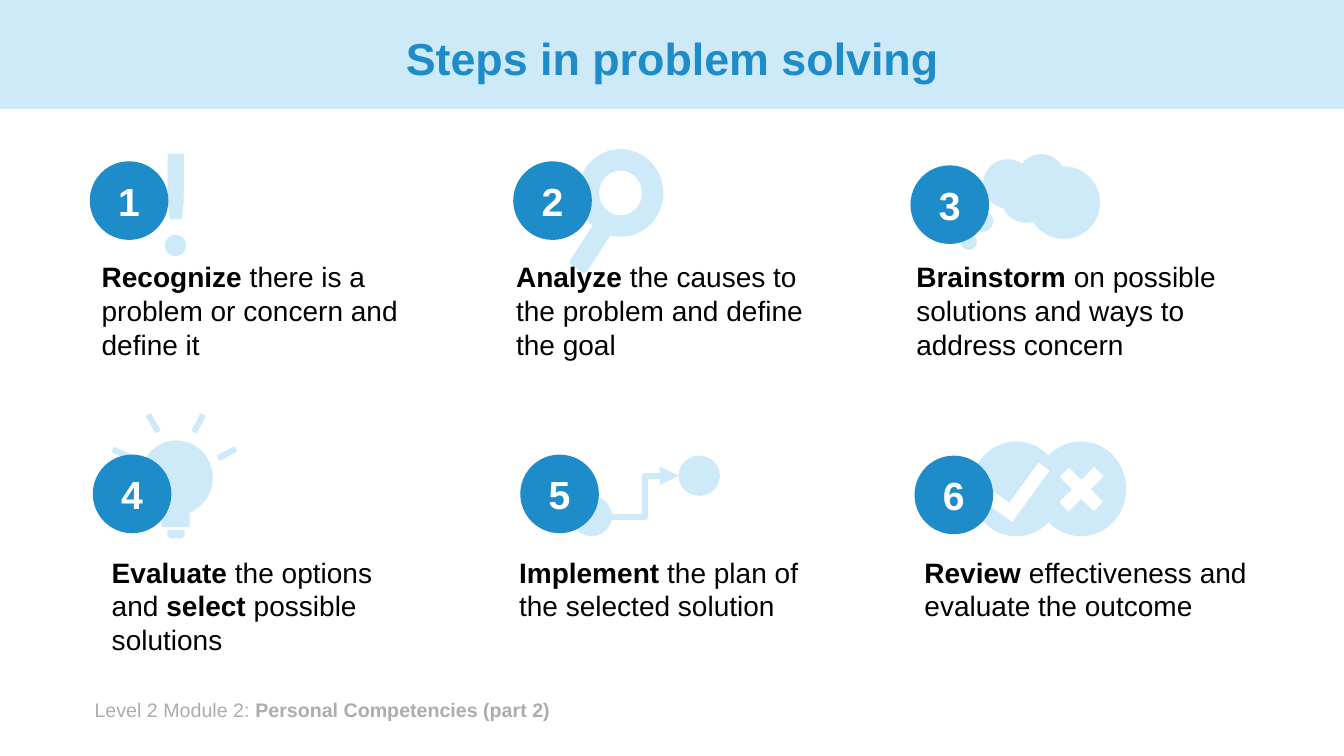
from dataclasses import dataclass

from lxml.etree import SubElement
from pptx import Presentation
from pptx.dml.color import RGBColor
from pptx.enum.shapes import MSO_CONNECTOR, MSO_SHAPE
from pptx.enum.text import MSO_ANCHOR, MSO_AUTO_SIZE, PP_ALIGN
from pptx.oxml.ns import qn
from pptx.util import Inches, Pt


@dataclass(frozen=True)
class Theme:
    font: str = "Arial"
    icon_font: str = "Lato"
    accent: str = "1D8CC8"
    pale: str = "CEE9F8"
    ink: str = "000000"
    white: str = "FFFFFF"
    muted: str = "AFABAB"
    title_size: int = 32
    badge_size: int = 28
    body_size: int = 20
    footer_size: int = 14
    mark_size: int = 100


THEME = Theme()
WIDTH, HEIGHT = 13.33, 7.5

# Grid: each step is placed from the origin of its cell
COLUMNS = (0.9, 5.0, 9.0)
ROWS = (1.5, 4.5)
TEXT_DROP = (1.03, 0.96)
TEXT_HEIGHT = (1.11, 0.77)
BADGE = 0.78


def write(shape, runs, size=THEME.body_size, color=THEME.ink, font=THEME.font,
          align=PP_ALIGN.LEFT, anchor=MSO_ANCHOR.TOP, spacing=None,
          fit=MSO_AUTO_SIZE.NONE):
    """Fill a shape with one paragraph of (text, bold) runs."""
    frame = shape.text_frame
    frame.word_wrap = True
    frame.auto_size = fit
    frame.vertical_anchor = anchor
    paragraph = frame.paragraphs[0]
    paragraph.alignment = align
    if spacing:
        paragraph.line_spacing = spacing
    for text, bold in runs:
        run = paragraph.add_run()
        run.text = text
        run.font.name = font
        run.font.size = Pt(size)
        run.font.bold = bold
        run.font.color.rgb = RGBColor.from_string(color)


def add_text(shapes, box, runs, **text_format):
    shape = shapes.add_textbox(*map(Inches, box))
    write(shape, runs, fit=MSO_AUTO_SIZE.SHAPE_TO_FIT_TEXT, **text_format)


def add_solid(shapes, kind, box, fill=THEME.pale, rotation=0, adjustments=()):
    shape = shapes.add_shape(kind, *map(Inches, box))
    shape.shadow.inherit = False
    shape.fill.solid()
    shape.fill.fore_color.rgb = RGBColor.from_string(fill)
    shape.line.fill.background()
    shape.rotation = rotation
    for index, value in enumerate(adjustments):
        shape.adjustments[index] = value
    return shape


def add_elbow_arrow(shapes, start, end):
    arrow = shapes.add_connector(MSO_CONNECTOR.ELBOW, *map(Inches, start + end))
    arrow.line.color.rgb = RGBColor.from_string(THEME.pale)
    arrow.line.width = Pt(4.5)
    properties = arrow.element.spPr
    SubElement(properties.find(qn("a:ln")), qn("a:tailEnd"), type="triangle")
    SubElement(properties, qn("a:effectLst"))


# Icons, drawn from a cell origin (x, y)
def draw_exclamation(shapes, x, y):
    add_text(shapes, (x + 0.08, y - 0.4, 1.54, 1.78), [("!", True)],
             size=THEME.mark_size, color=THEME.pale, font=THEME.icon_font,
             align=PP_ALIGN.CENTER)


def draw_magnifier(shapes, x, y):
    group = shapes.add_group_shape().shapes
    add_solid(group, MSO_SHAPE.DONUT, (x + 0.73, y - 0.02, 0.85, 0.87))
    add_solid(group, MSO_SHAPE.ROUNDED_RECTANGLE,
              (x + 0.77, y + 0.66, 0.2, 0.55), rotation=33)


def draw_cloud(shapes, x, y):
    group = shapes.add_group_shape().shapes
    for left, top, size in ((0.75, 0.08, 0.49), (0.93, 0.22, 0.49),
                            (1.08, 0.03, 0.49), (1.19, 0.15, 0.72),
                            (0.64, 0.59, 0.21), (0.53, 0.82, 0.16)):
        add_solid(group, MSO_SHAPE.OVAL, (x + left, y + top, size, size))


def draw_bulb(shapes, x, y):
    group = shapes.add_group_shape().shapes
    add_solid(group, MSO_SHAPE.OVAL, (x + 0.49, y - 0.13, 0.72, 0.74))
    add_solid(group, MSO_SHAPE.RECTANGLE, (x + 0.7, y + 0.56, 0.28, 0.17))
    add_solid(group, MSO_SHAPE.SNIP_2_SAME_RECTANGLE,
              (x + 0.76, y + 0.76, 0.17, 0.08), rotation=180,
              adjustments=(0.34, 0))
    for left, top, angle in ((0.59, -0.4, 329.6), (0.28, -0.1, 294.7),
                             (1.04, -0.4, 27.1), (1.32, -0.1, 62.2)):
        add_solid(group, MSO_SHAPE.FLOWCHART_ALTERNATE_PROCESS,
                  (x + left, y + top, 0.06, 0.2), rotation=angle)


def draw_route(shapes, x, y):
    group = shapes.add_group_shape().shapes
    add_elbow_arrow(group, (x + 1.06, y + 0.63), (x + 1.73, y + 0.22))
    for left, top in ((0.66, 0.42), (1.73, 0.02)):
        add_solid(group, MSO_SHAPE.OVAL, (x + left, y + top, 0.41, 0.4))


def draw_verdict(shapes, x, y):
    group = shapes.add_group_shape().shapes
    corner = MSO_SHAPE.from_xml("corner")
    marks = (
        (1.27, MSO_SHAPE.MATH_PLUS, (1.4, 0.02, 0.65, 0.67), 45, (0.2,)),
        (0.63, corner, (0.78, 0.17, 0.63, 0.32), 306, (0.42, 0.43)),
    )
    for disc, kind, (left, top, width, height), angle, adjustments in marks:
        add_solid(group, MSO_SHAPE.OVAL, (x + disc, y - 0.12, 0.9, 0.94))
        add_solid(group, kind, (x + left, y + top, width, height),
                  THEME.white, angle, adjustments)


# Steps: icon, badge offset, text indent, text width, runs
STEPS = (
    (draw_exclamation, (-0.01, 0.1), 0.01, 3.4,
     [("Recognize", True), (" there is a problem or concern and define it", False)]),
    (draw_magnifier, (0.09, 0.1), 0.02, 3.26,
     [("Analyze", True), (" the causes to the problem and define the goal", False)]),
    (draw_cloud, (0.03, 0.14), -0.01, 3.77,
     [("Brainstorm ", True),
      ("on possible solutions and ways to address concern", False)]),
    (draw_bulb, (0.02, 0.01), 0.11, 3.32,
     [("Evaluate ", True), ("the options and ", False),
      ("select ", True), ("possible solutions", False)]),
    (draw_route, (0.16, 0.01), 0.05, 3.26,
     [("Implement ", True), ("the plan of the selected solution", False)]),
    (draw_verdict, (0.07, 0.02), 0.07, 3.41,
     [("Review ", True), ("effectiveness and evaluate the outcome", False)]),
)


def add_step(shapes, index, draw_icon, badge_offset, indent, width, runs):
    row, column = divmod(index, len(COLUMNS))
    x, y = COLUMNS[column], ROWS[row]
    draw_icon(shapes, x, y)
    add_text(shapes, (x + indent, y + TEXT_DROP[row], width, TEXT_HEIGHT[row]), runs)
    badge = add_solid(shapes, MSO_SHAPE.OVAL,
                      (x + badge_offset[0], y + badge_offset[1], BADGE, BADGE),
                      THEME.accent)
    write(badge, [(str(index + 1), True)], size=THEME.badge_size,
          color=THEME.white, align=PP_ALIGN.CENTER, anchor=MSO_ANCHOR.MIDDLE)


def add_header(shapes):
    title = shapes.title
    title.left, title.top, title.width, title.height = map(
        Inches, (0.92, 0.13, 11.5, 0.95))
    write(title, [("Steps in problem solving", True)], size=THEME.title_size,
          color=THEME.accent, align=PP_ALIGN.CENTER, anchor=MSO_ANCHOR.MIDDLE,
          spacing=0.9)
    band = add_solid(shapes, MSO_SHAPE.RECTANGLE, (0, 0, WIDTH, 1.08))
    title.element.addprevious(band.element)  # band goes behind the title


def main():
    presentation = Presentation()
    presentation.slide_width, presentation.slide_height = Inches(WIDTH), Inches(HEIGHT)
    slide = presentation.slides.add_slide(presentation.slide_layouts[5])
    add_header(slide.shapes)
    add_text(slide.shapes, (0.84, 6.87, 8.56, 0.34),
             [("Level 2 Module 2: ", False), ("Personal Competencies (part 2)", True)],
             size=THEME.footer_size, color=THEME.muted)
    for index, step in enumerate(STEPS):
        add_step(slide.shapes, index, *step)
    presentation.save("out.pptx")


if __name__ == "__main__":
    main()
